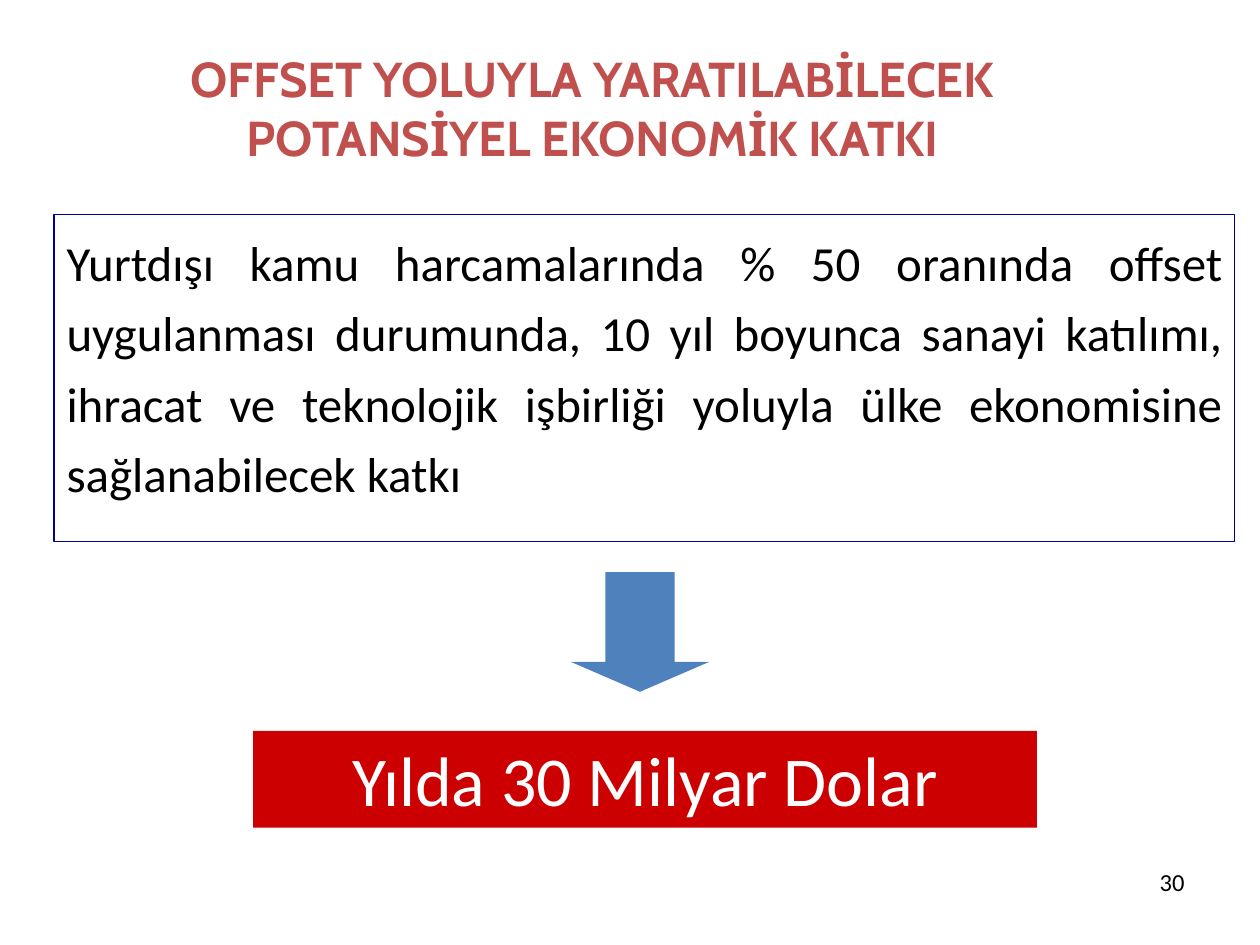
"""Build the slide on the potential economic contribution of offset."""
from dataclasses import dataclass

from pptx import Presentation
from pptx.dml.color import RGBColor
from pptx.enum.shapes import MSO_SHAPE
from pptx.enum.text import MSO_ANCHOR, PP_ALIGN
from pptx.util import Inches, Pt

RECTANGLE, DOWN_ARROW = MSO_SHAPE.RECTANGLE, MSO_SHAPE.DOWN_ARROW
TOP, MIDDLE = MSO_ANCHOR.TOP, MSO_ANCHOR.MIDDLE
CENTER, RIGHT, JUSTIFY = PP_ALIGN.CENTER, PP_ALIGN.RIGHT, PP_ALIGN.JUSTIFY

TITLE = "OFFSET YOLUYLA YARATILABİLECEK \nPOTANSİYEL EKONOMİK KATKI "
PREMISE = (
    "Yurtdışı kamu harcamalarında % 50 oranında offset uygulanması durumunda, "
    "10 yıl boyunca sanayi katılımı, ihracat ve teknolojik işbirliği yoluyla "
    "ülke ekonomisine sağlanabilecek katkı"
)
RESULT = "Yılda 30 Milyar Dolar"
PAGE_NUMBER = "30"

BOXES = {
    "title": (0.55, 0.39, 8.39, 0.93),
    "premise": (0.43, 1.7, 9.37, 2.6),
    "arrow": (4.53, 4.54, 1.1, 0.95),
    "result": (2.01, 5.8, 6.22, 0.77),
    "page_number": (7.17, 6.83, 2.33, 0.52),
}


@dataclass(frozen=True)
class Theme:
    """Hold the fonts, sizes and colours of the slide."""

    heading_font: str = "Cabin"
    body_font: str = "Calibri"
    heading_size: int = 28
    body_size: int = 28
    result_size: int = 40
    number_size: int = 14
    heading: str = "C0504D"
    text: str = "000000"
    result_text: str = "FFFFFF"
    result_fill: str = "CC0000"
    arrow: str = "4F81BD"
    border: str = "000099"


THEME = Theme()


def place(name):
    """Return the position and size of a named box."""
    return [Inches(value) for value in BOXES[name]]


def add_shape(slide, name, kind, fill=None, border=None):
    """Add a flat preset shape with an optional fill and border."""
    shape = slide.shapes.add_shape(kind, *place(name))
    shape.shadow.inherit = False
    if fill:
        shape.fill.solid()
        shape.fill.fore_color.rgb = RGBColor.from_string(fill)
    else:
        shape.fill.background()
    if border:
        shape.line.color.rgb = RGBColor.from_string(border)
        shape.line.width = Pt(0.75)
    else:
        shape.line.fill.background()
    return shape


def write(shape, text, size, color, alignment, font=THEME.body_font, anchor=TOP, bold=False):
    """Set the text of a shape and format its paragraphs and runs."""
    frame = shape.text_frame
    frame.text = text
    frame.word_wrap = True
    frame.vertical_anchor = anchor
    for paragraph in frame.paragraphs:
        paragraph.alignment = alignment
        for run in paragraph.runs:
            run.font.name = font
            run.font.size = Pt(size)
            run.font.bold = bold
            run.font.color.rgb = RGBColor.from_string(color)


def main():
    """Build and save the presentation."""
    presentation = Presentation()
    presentation.slide_width, presentation.slide_height = Inches(10), Inches(7.5)
    slide = presentation.slides.add_slide(presentation.slide_layouts[6])

    page_number = slide.shapes.add_textbox(*place("page_number"))
    write(page_number, PAGE_NUMBER, THEME.number_size, THEME.text, RIGHT)

    premise = add_shape(slide, "premise", RECTANGLE, border=THEME.border)
    write(premise, PREMISE, THEME.body_size, THEME.text, JUSTIFY)
    paragraph = premise.text_frame.paragraphs[0]
    paragraph.line_spacing = 1.2
    paragraph.space_before = Pt(6)

    arrow = add_shape(slide, "arrow", DOWN_ARROW, fill=THEME.arrow)
    arrow.adjustments[0], arrow.adjustments[1] = 0.5, 0.25

    result = add_shape(slide, "result", RECTANGLE, fill=THEME.result_fill)
    write(result, RESULT, THEME.result_size, THEME.result_text, CENTER)

    title = slide.shapes.add_textbox(*place("title"))
    write(title, TITLE, THEME.heading_size, THEME.heading, CENTER,
          THEME.heading_font, MIDDLE, bold=True)

    presentation.save("out.pptx")


if __name__ == "__main__":
    main()
